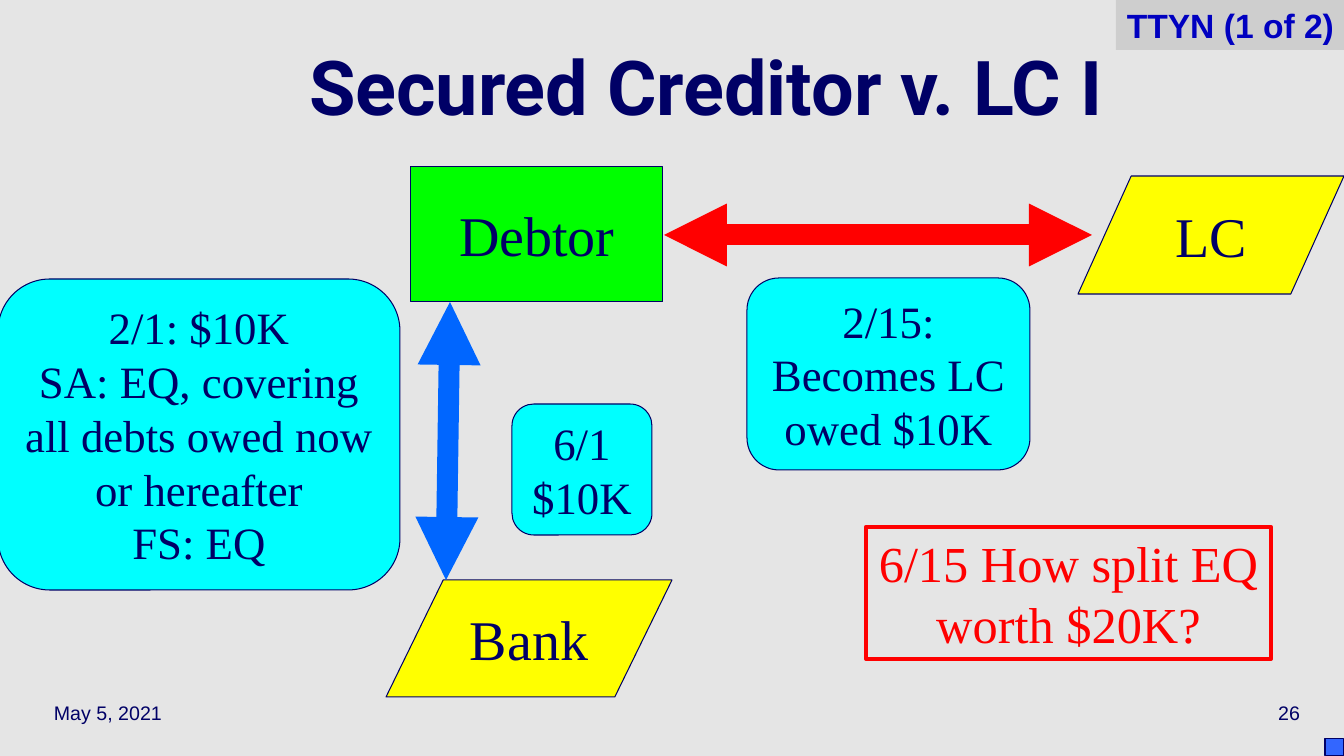
from dataclasses import dataclass

from lxml.etree import SubElement
from pptx import Presentation
from pptx.dml.color import RGBColor
from pptx.enum.shapes import MSO_CONNECTOR, MSO_SHAPE
from pptx.enum.text import MSO_ANCHOR, PP_ALIGN
from pptx.oxml.ns import qn
from pptx.util import Emu, Pt


@dataclass(frozen=True)
class Theme:
    background: str = "E5E5E5"
    tag: str = "CECECE"
    tag_text: str = "0000C0"
    navy: str = "000066"
    yellow: str = "FFFF00"
    green: str = "00FF00"
    cyan: str = "00FFFF"
    red: str = "FF0000"
    blue: str = "0066FF"
    corner: str = "3366FF"
    heading_font: str = "Roboto"
    body_font: str = "Times New Roman"
    label_font: str = "Arial"
    title_size: int = 54
    party_size: int = 40
    question_size: int = 36
    event_size: int = 32
    tag_size: int = 24
    footer_size: int = 14
    outline: float = 0.75
    frame: int = 3
    arrow: int = 15


def px(length):
    return Emu(round(length * 914400 / 100.8))


class SlideBuilder:
    def __init__(self, slide, theme):
        self.slide = slide
        self.theme = theme
        fill = slide.background.fill
        fill.solid()
        fill.fore_color.rgb = RGBColor.from_string(theme.background)

    def set_text(self, shape, lines, size, font, color=None, bold=False,
                 align=PP_ALIGN.CENTER, wrap=True, spacing=None):
        frame = shape.text_frame
        frame.text = "\n".join(lines)
        frame.word_wrap = wrap
        frame.vertical_anchor = MSO_ANCHOR.MIDDLE
        for paragraph in frame.paragraphs:
            paragraph.alignment = align
            paragraph.line_spacing = spacing
            paragraph.font.size = Pt(size)
            paragraph.font.name = font
            paragraph.font.bold = bold
            paragraph.font.color.rgb = RGBColor.from_string(color or self.theme.navy)

    def label(self, box, content, size, font, **style):
        shape = self.slide.shapes.add_textbox(*map(px, box))
        self.set_text(shape, [content], size, font, **style)

    def block(self, kind, box, fill=None, line=None, width=None):
        shape = self.slide.shapes.add_shape(kind, *map(px, box))
        shape.shadow.inherit = False
        if fill:
            shape.fill.solid()
            shape.fill.fore_color.rgb = RGBColor.from_string(fill)
        else:
            shape.fill.background()
        if line:
            shape.line.color.rgb = RGBColor.from_string(line)
            shape.line.width = Pt(width or self.theme.outline)
        else:
            shape.line.fill.background()
        return shape

    def party(self, kind, box, name, fill):
        shape = self.block(kind, box, fill, self.theme.navy)
        self.set_text(shape, [name], self.theme.party_size, self.theme.body_font, wrap=False)

    def event(self, box, *lines):
        shape = self.block(MSO_SHAPE.FLOWCHART_ALTERNATE_PROCESS, box,
                           self.theme.cyan, self.theme.navy)
        self.set_text(shape, lines, self.theme.event_size, self.theme.body_font)

    def question(self, box, content):
        shape = self.block(MSO_SHAPE.RECTANGLE, box, None, self.theme.red, self.theme.frame)
        self.set_text(shape, [content], self.theme.question_size, self.theme.body_font,
                      color=self.theme.red)

    def tag(self, box, content):
        shape = self.block(MSO_SHAPE.RECTANGLE, box, self.theme.tag)
        self.set_text(shape, [content], self.theme.tag_size, self.theme.label_font,
                      color=self.theme.tag_text, bold=True, align=PP_ALIGN.RIGHT)

    def arrow(self, ends, color):
        connector = self.slide.shapes.add_connector(MSO_CONNECTOR.STRAIGHT, *map(px, ends))
        connector.line.color.rgb = RGBColor.from_string(color)
        connector.line.width = Pt(self.theme.arrow)
        properties = connector._element.spPr
        outline = properties.find(qn("a:ln"))
        for end in ("a:headEnd", "a:tailEnd"):
            SubElement(outline, qn(end), type="triangle")
        SubElement(properties, qn("a:effectLst"))


def main():
    theme = Theme()
    deck = Presentation()
    deck.slide_width, deck.slide_height = px(1344), px(756)
    page = SlideBuilder(deck.slides.add_slide(deck.slide_layouts[6]), theme)

    page.label((44, 688, 280, 50), "May 5, 2021", theme.footer_size, theme.label_font,
               align=PP_ALIGN.LEFT)
    page.label((1030, 688, 280, 50), "26", theme.footer_size, theme.label_font,
               align=PP_ALIGN.RIGHT)
    page.label((90, 33, 1232, 126), "Secured Creditor v. LC I", theme.title_size,
               theme.heading_font, bold=True, spacing=0.7)

    page.party(MSO_SHAPE.FLOWCHART_DATA, (386, 580, 286, 117), "Bank", theme.yellow)
    page.party(MSO_SHAPE.FLOWCHART_PROCESS, (411, 167, 252, 135), "Debtor", theme.green)
    page.party(MSO_SHAPE.FLOWCHART_DATA, (1078, 176, 266, 118), "LC", theme.yellow)

    page.arrow((664, 235, 1092, 235), theme.red)
    page.arrow((446, 580, 450, 302), theme.blue)

    page.event((-2, 279, 402, 311), "2/1: $10K",
               "SA: EQ, covering all debts owed now or hereafter", "FS: EQ")
    page.event((512, 404, 140, 131), "6/1", "$10K")
    page.event((747, 278, 283, 192), "2/15: Becomes LC owed $10K")

    page.question((866, 527, 405, 132), "6/15 How split EQ worth $20K?")
    page.block(MSO_SHAPE.RECTANGLE, (1325, 739, 19, 17), theme.corner, theme.navy)
    page.tag((1116, 0, 228, 50), "TTYN (1 of 2)")

    deck.save("out.pptx")


if __name__ == "__main__":
    main()
